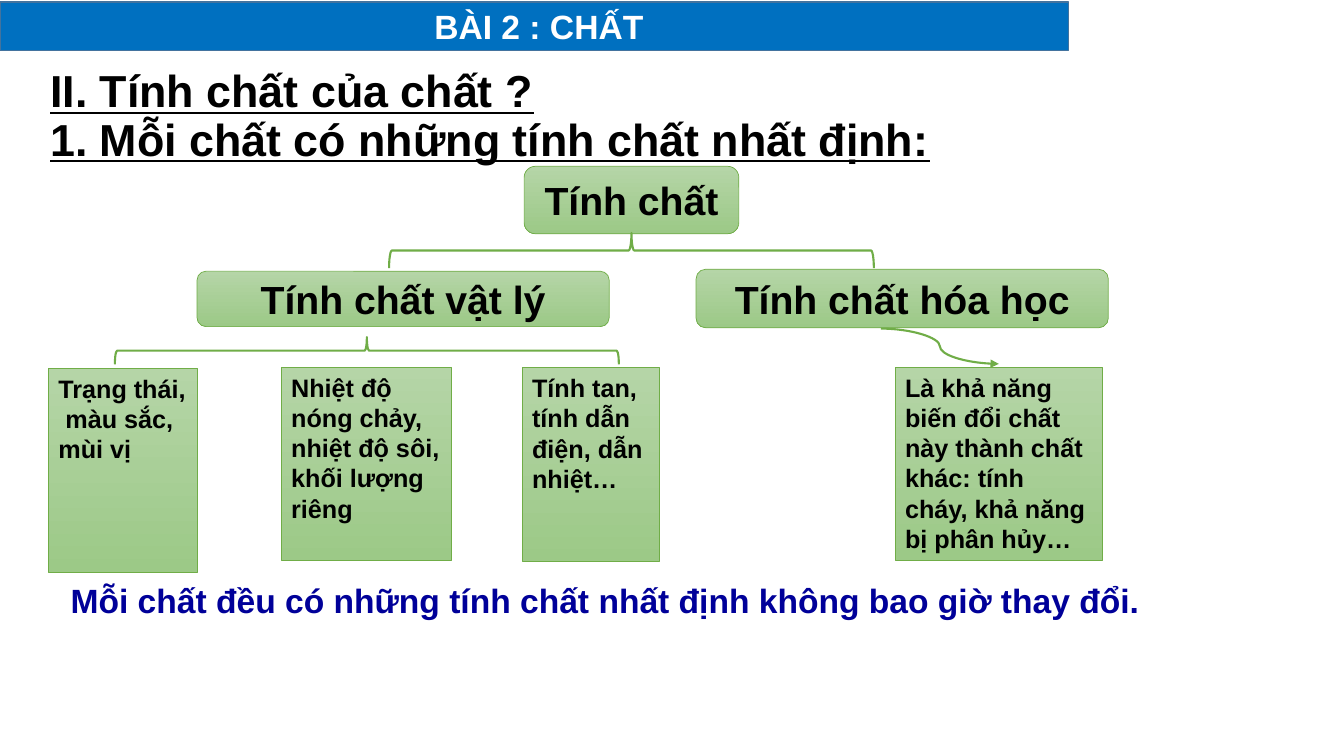
from lxml import etree
from pptx import Presentation
from pptx.dml.color import RGBColor
from pptx.enum.shapes import MSO_CONNECTOR, MSO_SHAPE
from pptx.enum.text import MSO_ANCHOR, PP_ALIGN
from pptx.oxml.ns import qn
from pptx.util import Pt

RECT, ROUNDED = MSO_SHAPE.RECTANGLE, MSO_SHAPE.FLOWCHART_ALTERNATE_PROCESS
BRACE, CURVE = MSO_SHAPE.RIGHT_BRACE, MSO_CONNECTOR.CURVE
LEFT, CENTER = PP_ALIGN.LEFT, PP_ALIGN.CENTER
TOP, MIDDLE = MSO_ANCHOR.TOP, MSO_ANCHOR.MIDDLE

# Boxes are left, top, width, height in points.
BANNER = (" BÀI 2 : CHẤT", (0, 1.44, 763.2, 34.56))
TITLE = ("II. Tính chất của chất ?\v1. Mỗi chất có những tính chất nhất định:",
         (28.8, 31.8, 828, 104.4))
CONCLUSION = ("Mỗi chất đều có những tính chất nhất định không bao giờ thay đổi. ",
              (21.6, 414, 828, 8.64))
HEADINGS = [
    ("Tính chất", (374.4, 118.8, 153.4, 48.2)),
    ("Tính chất vật lý", (140.7, 193.7, 294.5, 39.6)),
    ("Tính chất hóa học", (497.2, 192.3, 294.5, 41.8)),
]
DETAILS = [
    ("Trạng thái,\n màu sắc,\nmùi vị", (34.6, 263, 106.6, 145.5)),
    ("Nhiệt độ nóng chảy, nhiệt độ sôi, khối lượng riêng",
     (200.9, 262.1, 121.7, 138.2)),
    ("Tính tan, tính dẫn điện, dẫn nhiệt…", (373, 262.5, 98, 138.2)),
    ("Là khả năng biến đổi chất này thành chất khác: tính cháy, khả năng bị phân hủy…",
     (639.4, 262.1, 148.3, 138.2)),
]
BRACES = [(277.9, 166.3, 346.3, 25.2), (82.1, 240.8, 360, 19.4)]
ARROW = (629.3, 234.7, 713.5, 259.9)

THEME = {
    "font": "Arial",
    "banner": "0070C0", "banner_line": "43739E",
    "green_top": "B5D5A7", "green_bottom": "9CC987", "green_line": "70AD47",
    "white": "FFFFFF", "black": "000000", "navy": "000099",
    "title_size": 32, "heading_size": 28, "lead_size": 24, "detail_size": 18,
}


def rgb(name):
    return RGBColor.from_string(THEME[name])


def points(box):
    return [Pt(v) for v in box]


def write(sp, text, size, color="black", align=CENTER, anchor=MIDDLE,
          spacing=1.0, underline=False, wrap=True):
    tf = sp.text_frame
    tf.text = text
    tf.word_wrap = wrap
    tf.vertical_anchor = anchor
    style = {"name": THEME["font"], "size": Pt(THEME[size]), "bold": True,
             "underline": underline}
    for p in tf.paragraphs:
        p.alignment, p.line_spacing = align, spacing
        for r in p.runs:
            for key, value in style.items():
                setattr(r.font, key, value)
            r.font.color.rgb = rgb(color)


def outline(sp, color, width):
    sp.line.color.rgb = rgb(color)
    sp.line.width = Pt(width)


def add_green_box(slide, kind, box):
    sp = slide.shapes.add_shape(kind, *points(box))
    sp.shadow.inherit = False
    sp.fill.gradient()
    sp.fill.gradient_angle = 270
    for stop, name in zip(sp.fill.gradient_stops, ("green_top", "green_bottom")):
        stop.color.rgb = rgb(name)
    outline(sp, "green_line", 0.5)
    return sp


def add_brace(slide, box):
    """Draw a brace that fills the box with its tip pointing up."""
    left, top, width, height = box
    turn = (width - height) / 2
    sp = slide.shapes.add_shape(
        BRACE, *points((left + turn, top - turn, height, width)))
    sp.shadow.inherit = False
    sp.rotation = 90
    sp._element.spPr.find(qn("a:xfrm")).set("flipH", "1")
    sp.adjustments[0] = 0.08
    sp.fill.background()
    outline(sp, "green_line", 1.5)


def add_arrow(slide, ends):
    cx = slide.shapes.add_connector(CURVE, *points(ends))
    outline(cx, "green_line", 1.5)
    etree.SubElement(cx.line._get_or_add_ln(), qn("a:tailEnd"), type="triangle")
    etree.SubElement(cx._element.spPr, qn("a:effectLst"))


def main():
    prs = Presentation()
    prs.slide_width, prs.slide_height = Pt(960), Pt(540)
    s = prs.slides.add_slide(prs.slide_layouts[6])

    text, box = BANNER
    sp = s.shapes.add_shape(RECT, *points(box))
    sp.shadow.inherit = False
    sp.fill.solid()
    sp.fill.fore_color.rgb = rgb("banner")
    outline(sp, "banner_line", 1)
    write(sp, text, "lead_size", "white")

    text, box = TITLE
    write(s.shapes.add_textbox(*points(box)), text, "title_size",
          align=LEFT, spacing=0.9, underline=True)
    text, box = CONCLUSION
    write(s.shapes.add_textbox(*points(box)), text, "lead_size", "navy",
          anchor=TOP, spacing=0.9)

    for text, box in HEADINGS:
        write(add_green_box(s, ROUNDED, box), text, "heading_size")
    for box in BRACES:
        add_brace(s, box)
    add_arrow(s, ARROW)
    for text, box in DETAILS:
        write(add_green_box(s, RECT, box), text, "detail_size", align=LEFT,
              anchor=TOP, wrap="\n" not in text)

    prs.save("out.pptx")


if __name__ == "__main__":
    main()
